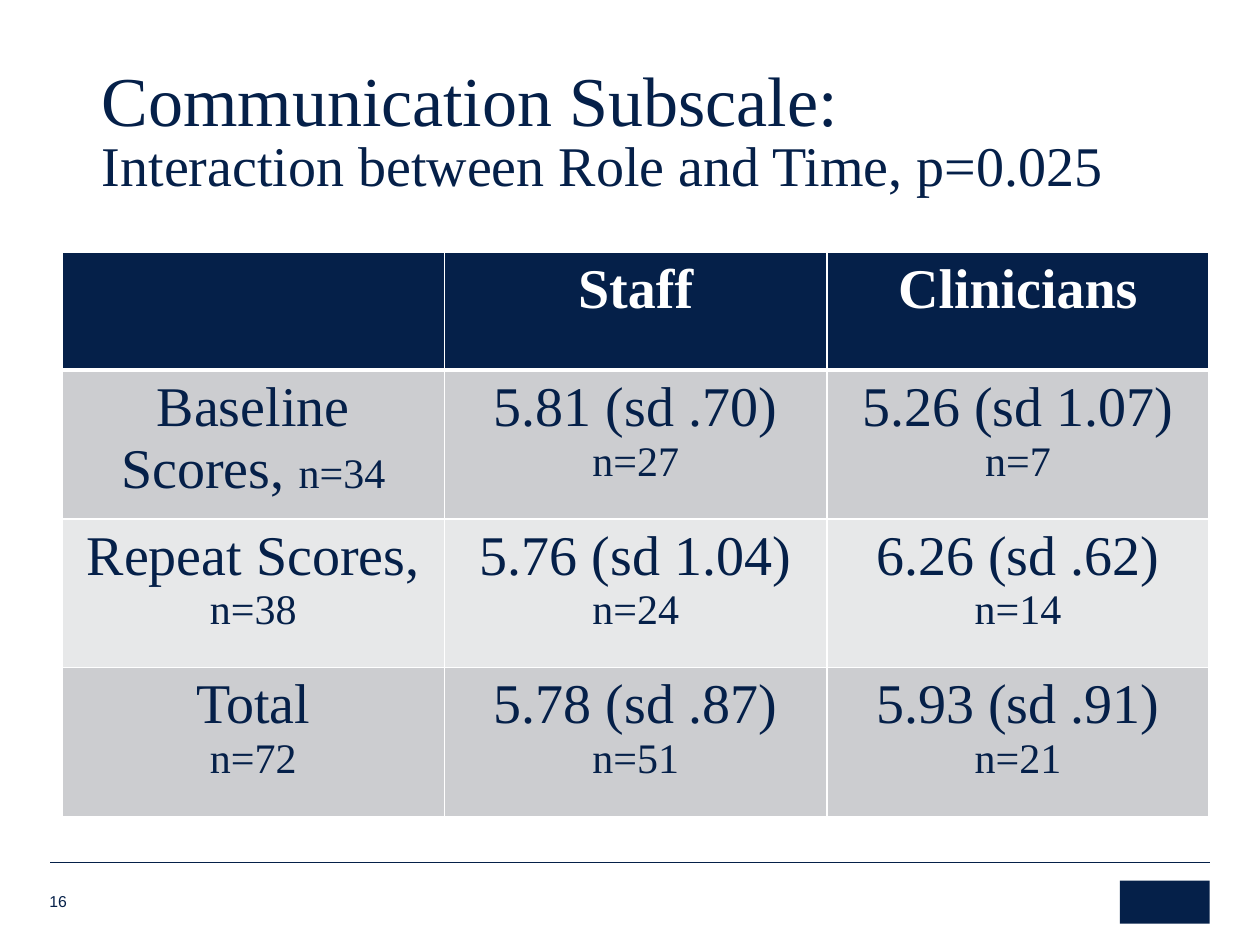
from lxml import etree
from pptx import Presentation
from pptx.dml import color
from pptx.enum import shapes, text
from pptx.oxml import ns
from pptx.util import Pt

NAVY, WHITE, GREY, PALE = "052049", "FFFFFF", "CCCDD0", "E7E8E9"
SERIF, SANS = "Times New Roman", "Arial"
BIG, SMALL = 32, 24


def rgb(code):
    return color.RGBColor.from_string(code)


class Deck:
    """Holds the style and the current slide, and draws each kind of element."""

    def __init__(self, wide, high):
        self.file = Presentation()
        self.file.slide_width, self.file.slide_height = Pt(wide), Pt(high)
        self.slide = self.file.slides.add_slide(self.file.slide_layouts[5])
        self.shapes = self.slide.shapes

    def run(self, para, words, size, font=SERIF, ink=NAVY, bold=False):
        run = para.add_run()
        run.text = words
        run.font.size, run.font.name, run.font.bold = Pt(size), font, bold
        run.font.color.rgb = rgb(ink)

    def title(self, box, head, sub):
        item = self.shapes.title
        item.left, item.top, item.width, item.height = map(Pt, box)
        frame = item.text_frame
        frame.word_wrap = True
        frame.auto_size = text.MSO_AUTO_SIZE.NONE
        frame.vertical_anchor = text.MSO_ANCHOR.BOTTOM
        para = frame.paragraphs[0]
        para.alignment, para.line_spacing = text.PP_ALIGN.LEFT, 0.85
        self.run(para, head, 40)
        para.add_line_break()
        self.run(para, sub, BIG)

    def line(self, start, end, width):
        item = self.shapes.add_connector(
            shapes.MSO_CONNECTOR.STRAIGHT, *map(Pt, start + end))
        item.line.color.rgb, item.line.width = rgb(NAVY), Pt(width)
        etree.SubElement(item._element.spPr, ns.qn("a:effectLst"))

    def block(self, box):
        item = self.shapes.add_shape(shapes.MSO_SHAPE.RECTANGLE, *map(Pt, box))
        item.shadow.inherit = False
        item.fill.solid()
        item.fill.fore_color.rgb = rgb(NAVY)
        item.line.fill.background()

    def label(self, box, words, size):
        frame = self.shapes.add_textbox(*map(Pt, box)).text_frame
        frame.word_wrap = True
        frame.vertical_anchor = text.MSO_ANCHOR.BOTTOM
        frame.margin_left = frame.margin_right = 0
        frame.margin_top = frame.margin_bottom = 0
        self.run(frame.paragraphs[0], words, size, SANS)

    def border(self, cell, side, width):
        edge = etree.SubElement(
            cell._tc.get_or_add_tcPr(), ns.qn("a:ln" + side), w=str(Pt(width)))
        fill = etree.SubElement(edge, ns.qn("a:solidFill"))
        etree.SubElement(fill, ns.qn("a:srgbClr"), val=WHITE)

    def cell(self, cell, paras, fill, ink, bold, edges):
        for side, width in edges.items():
            self.border(cell, side, width)
        cell.fill.solid()
        cell.fill.fore_color.rgb = rgb(fill)
        frame = cell.text_frame
        for i, runs in enumerate(paras):
            para = frame.add_paragraph() if i else frame.paragraphs[0]
            para.alignment = text.PP_ALIGN.CENTER
            for words, size in runs:
                self.run(para, words, size, ink=ink, bold=bold)

    def table(self, box, highs, rows):
        grid = self.shapes.add_table(
            len(rows), len(rows[0]), *map(Pt, box)).table
        for row, high in zip(grid.rows, highs):
            row.height = Pt(high)
        for r, row in enumerate(rows):
            head = r == 0
            fill = NAVY if head else GREY if r % 2 else PALE
            edges = {"L": 1, "R": 1, "T": 3 if r == 1 else 1,
                     "B": 3 if head else 1}
            for c, paras in enumerate(row):
                self.cell(grid.cell(r, c), paras, fill,
                          WHITE if head else NAVY, head, edges)


def score(mean, count):
    return [[(mean, BIG)], [(count, SMALL)]]


def main():
    deck = Deck(720, 540)
    deck.line((28.8, 492.5), (691.2, 492.5), 0.25)
    deck.block((640, 503.3, 51.2, 24.5))
    deck.title((51, 34.5, 637, 82), "Communication Subscale: ",
               "Interaction between Role and Time, p=0.025")
    deck.table((35.5, 144, 655.5, 322.5), (67.5, 85, 85, 85), [
        [[], [[("Staff", BIG)]], [[("Clinicians", BIG)]]],
        [[[("Baseline Scores, ", BIG), ("n=34", SMALL)]],
         score("5.81 (sd .70)", "n=27"), score("5.26 (sd 1.07)", "n=7")],
        [[[("Repeat Scores, ", BIG), ("n=38", SMALL)]],
         score("5.76 (sd 1.04)", "n=24"), score("6.26 (sd .62)", "n=14")],
        [score("Total", "n=72"),
         score("5.78 (sd .87)", "n=51"), score("5.93 (sd .91)", "n=21")],
    ])
    deck.label((28.2, 508.3, 19.5, 12.2), "16", 9)
    deck.file.save("out.pptx")


if __name__ == "__main__":
    main()
